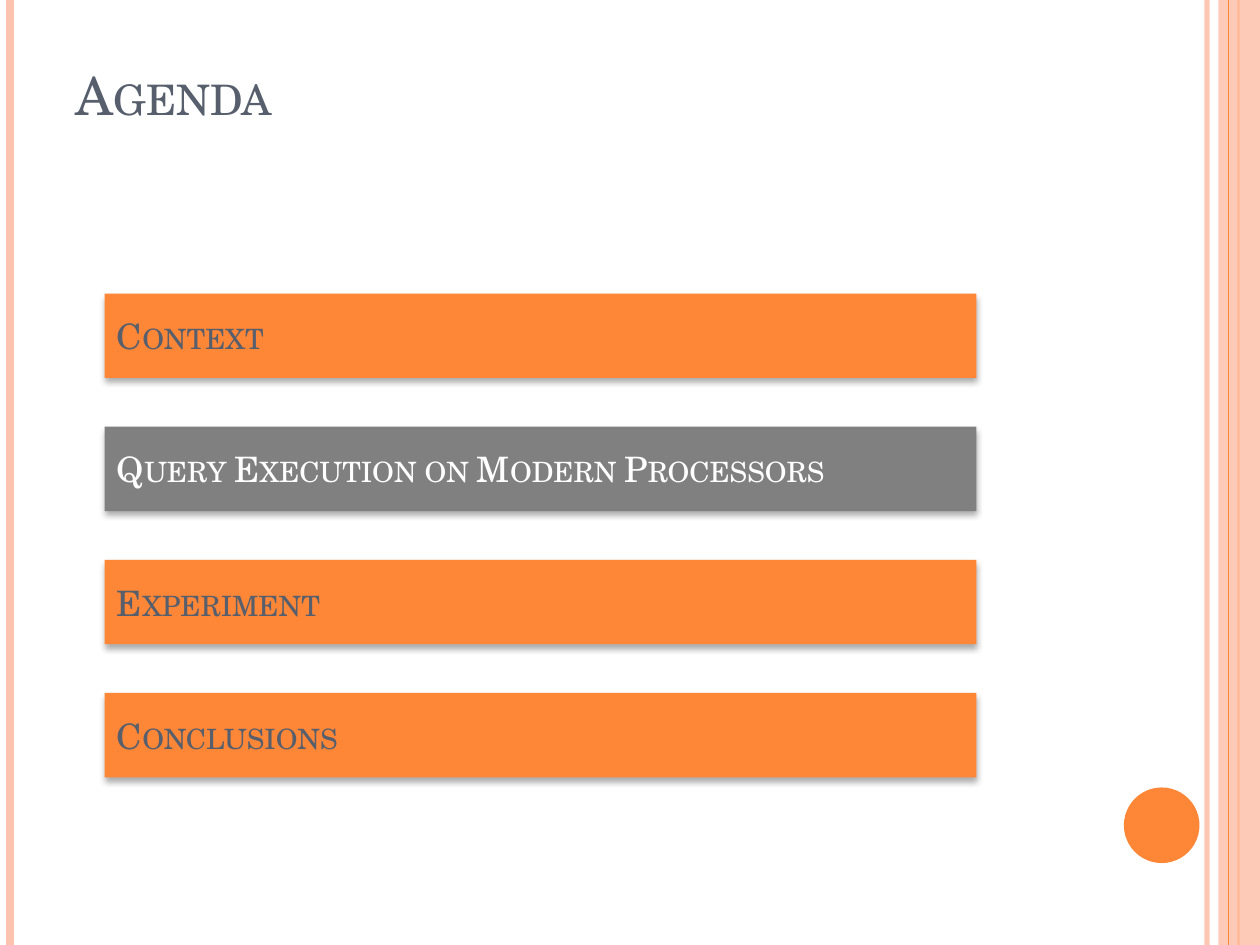
from lxml.etree import SubElement
from pptx import Presentation
from pptx.dml.color import RGBColor
from pptx.enum.shapes import MSO_CONNECTOR, MSO_SHAPE
from pptx.enum.text import MSO_ANCHOR, PP_ALIGN
from pptx.oxml.ns import qn
from pptx.util import Inches, Pt

WIDTH, HEIGHT = 10, 7.5
ORANGE, PEACH, GREY, SLATE, WHITE = "FE8637", "FEC3AE", "808080", "575F6D", "FFFFFF"
FONT = "TeX Gyre Schola"


def paint(color_format, color):
    color_format.rgb = RGBColor.from_string(color)


def write(tf, text, size=20, color=SLATE, anchor=MSO_ANCHOR.MIDDLE):
    tf.word_wrap = True
    tf.vertical_anchor = anchor
    p = tf.paragraphs[0]
    p.alignment = PP_ALIGN.LEFT
    r = p.add_run()
    r.text = text
    r.font.name = FONT
    r.font.size = Pt(size)
    paint(r.font.color, color)
    r.font._element.set("cap", "small")


def set_alpha(fill_parent, percent):
    clr = fill_parent.find(qn("a:solidFill"))[0]
    SubElement(clr, qn("a:alpha"), val=str(percent * 1000))


class AgendaSlide:
    def __init__(self, prs):
        self.s = prs.slides.add_slide(prs.slide_layouts[5])

    def title(self, text, x, y, w, h):
        sp = self.s.shapes.title
        sp.left, sp.top, sp.width, sp.height = map(Inches, (x, y, w, h))
        sp.text_frame.margin_bottom = Inches(0.55)
        write(sp.text_frame, text, size=30, anchor=MSO_ANCHOR.BOTTOM)

    def rule(self, x, color, weight, alpha=100):
        ln = self.s.shapes.add_connector(
            MSO_CONNECTOR.STRAIGHT, Inches(x), 0, Inches(x), Inches(HEIGHT))
        paint(ln.line.color, color)
        ln.line.width = Pt(weight)
        if alpha < 100:
            set_alpha(ln.line._get_or_add_ln(), alpha)
        SubElement(ln._element.spPr, qn("a:effectLst"))

    def block(self, x, y, w, h, color, kind=MSO_SHAPE.RECTANGLE, alpha=100):
        sp = self.s.shapes.add_shape(kind, *map(Inches, (x, y, w, h)))
        sp.shadow.inherit = False
        sp.fill.solid()
        paint(sp.fill.fore_color, color)
        sp.line.fill.background()
        if alpha < 100:
            set_alpha(sp._element.spPr, alpha)
        return sp

    def bar(self, text, x, y, w, h, color, text_color):
        sp = self.block(x, y, w, h, color)
        effects = sp._element.spPr.find(qn("a:effectLst"))
        shadow = SubElement(effects, qn("a:outerShdw"), blurRad=str(Pt(3.5)),
                            dist=str(Pt(2.2)), dir="5400000", rotWithShape="0")
        clr = SubElement(shadow, qn("a:srgbClr"), val="000000")
        SubElement(clr, qn("a:alpha"), val="32000")
        write(sp.text_frame, text, color=text_color)


def main():
    prs = Presentation()
    prs.slide_width, prs.slide_height = Inches(WIDTH), Inches(HEIGHT)
    agenda = AgendaSlide(prs)

    agenda.rule(9.58, PEACH, 3, alpha=93)
    agenda.rule(0.08, PEACH, 4.5)
    agenda.rule(9.83, ORANGE, 1.5)
    agenda.block(9.67, 0, WIDTH - 9.67, HEIGHT, PEACH, alpha=87)
    agenda.rule(9.75, ORANGE, 0.75)
    agenda.block(8.92, 6.25, 0.6, 0.6, ORANGE, kind=MSO_SHAPE.OVAL)

    agenda.title("Agenda", 0.5, 0.3, 8.17, 1.25)
    topics = ["Context", "Query Execution on Modern Processors", "Experiment", "Conclusions"]
    current = 1
    top, pitch = 2.33, 3.17 / 3
    for i, topic in enumerate(topics):
        color, text_color = (GREY, WHITE) if i == current else (ORANGE, SLATE)
        agenda.bar(topic, 0.83, top + i * pitch, 6.92, 0.67, color, text_color)

    prs.save("out.pptx")


if __name__ == "__main__":
    main()
